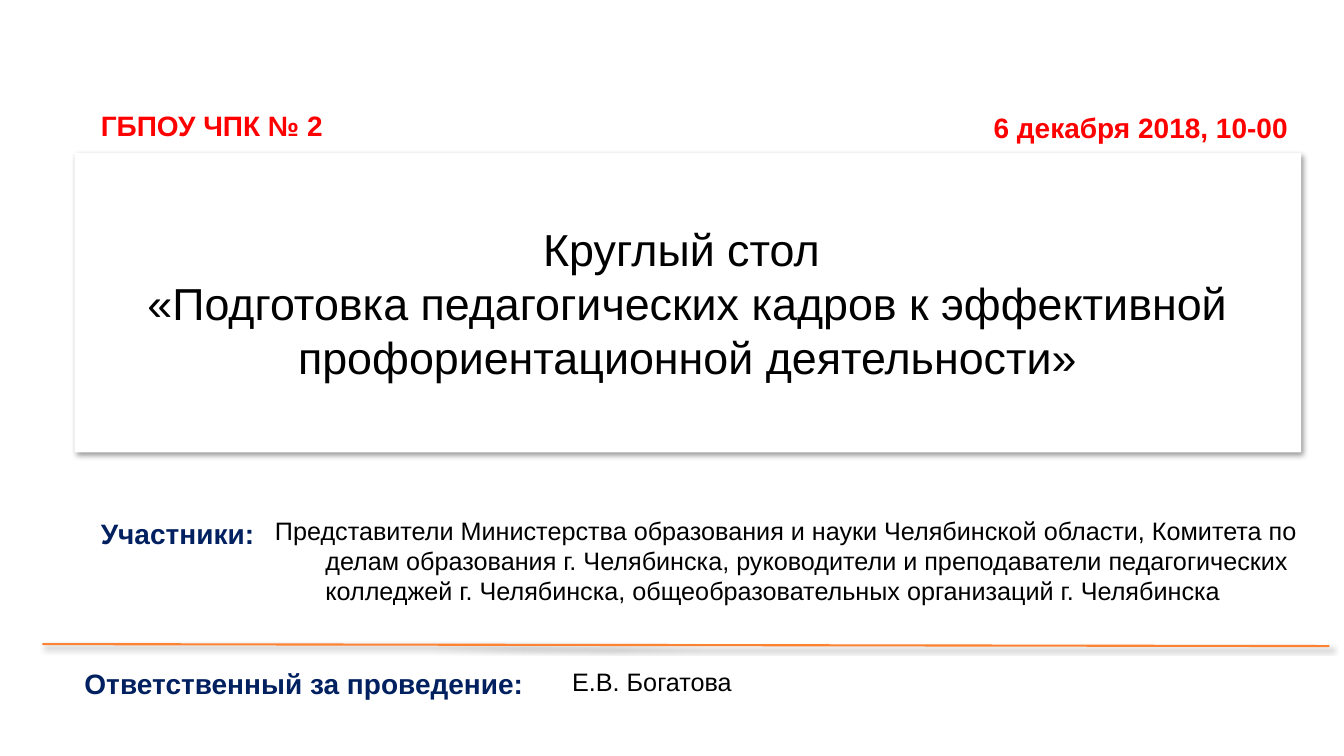
from lxml import etree
from pptx import Presentation
from pptx.dml.color import RGBColor
from pptx.enum.shapes import MSO_CONNECTOR, MSO_SHAPE
from pptx.enum.text import MSO_ANCHOR, MSO_AUTO_SIZE, PP_ALIGN
from pptx.oxml.ns import qn
from pptx.util import Cm, Pt

RECTANGLE = MSO_SHAPE.RECTANGLE
STRAIGHT = MSO_CONNECTOR.STRAIGHT
MIDDLE = MSO_ANCHOR.MIDDLE
GROW = MSO_AUTO_SIZE.SHAPE_TO_FIT_TEXT
LEFT, CENTER = PP_ALIGN.LEFT, PP_ALIGN.CENTER


def color(value):
    return RGBColor.from_string(value)


def write(tf, text, size=18, fill="000000", bold=False, align=LEFT, hanging=0):
    """Fill the first paragraph; hanging is the hanging indent in cm."""
    p = tf.paragraphs[0]
    p.text = text
    p.alignment = align
    if hanging:
        pPr = p._p.get_or_add_pPr()
        pPr.set("marL", str(Cm(hanging)))
        pPr.set("indent", str(-Cm(hanging)))
    for r in p.runs:
        r.font.name = "Arial"
        r.font.size = Pt(size)
        r.font.bold = bold
        r.font.color.rgb = color(fill)


def drop_shadow(sp):
    effects = etree.SubElement(sp._element.spPr, qn("a:effectLst"))
    shadow = etree.SubElement(effects, qn("a:outerShdw"), blurRad=str(Pt(4)),
                              dist=str(Pt(3)), dir="2700000", rotWithShape="0")
    tint = etree.SubElement(shadow, qn("a:srgbClr"), val="000000")
    etree.SubElement(tint, qn("a:alpha"), val="40000")


class Announcement:
    RED, NAVY, ORANGE, WHITE = "FF0000", "002060", "FD8231", "FFFFFF"

    def __init__(self, prs):
        self.s = prs.slides.add_slide(prs.slide_layouts[6])

    def title(self, text, x, y, w, h):
        sp = self.s.shapes.add_shape(RECTANGLE, Cm(x), Cm(y), Cm(w), Cm(h))
        sp.fill.solid()
        sp.fill.fore_color.rgb = color(self.WHITE)
        sp.line.fill.background()
        drop_shadow(sp)
        sp.text_frame.word_wrap = True
        sp.text_frame.vertical_anchor = MIDDLE
        write(sp.text_frame, text, size=32, align=CENTER)

    def rule(self, x1, y1, x2, y2):
        line = self.s.shapes.add_connector(STRAIGHT, Cm(x1), Cm(y1), Cm(x2), Cm(y2))
        line.line.color.rgb = color(self.ORANGE)
        line.line.width = Pt(1.5)
        drop_shadow(line)

    def text(self, text, x, y, w, h, wrap=True, **style):
        tf = self.s.shapes.add_textbox(Cm(x), Cm(y), Cm(w), Cm(h)).text_frame
        tf.word_wrap = wrap
        tf.auto_size = GROW
        write(tf, text, **style)

    def label(self, text, x, y, w, fill):
        self.text(text, x, y, w, 1.12, wrap=False, size=20, fill=fill, bold=True)


def main():
    prs = Presentation()
    prs.slide_width, prs.slide_height = Cm(33.87), Cm(19.05)
    a = Announcement(prs)
    a.title("Круглый стол \v«Подготовка педагогических кадров к эффективной "
            "профориентационной деятельности»", 1.88, 3.86, 30.91, 7.54)
    a.rule(1.07, 16.23, 33.5, 16.28)
    a.label("ГБПОУ ЧПК № 2", 2.29, 2.62, 6.15, a.RED)
    a.label("6 декабря 2018, 10-00", 24.79, 2.67, 7.98, a.RED)
    a.label("Участники:", 2.29, 12.88, 4.42, a.NAVY)
    a.text("Представители Министерства образования и науки Челябинской области, "
           "Комитета по делам образования г. Челябинска, руководители и "
           "преподаватели педагогических колледжей г. Челябинска, "
           "общеобразовательных организаций г. Челябинска",
           6.68, 12.85, 27.18, 2.57, hanging=1.27)
    a.label("Ответственный за проведение:", 1.88, 16.66, 11.66, a.NAVY)
    a.text("Е.В. Богатова", 14.17, 16.66, 16.94, 1.02)
    prs.save("out.pptx")


if __name__ == "__main__":
    main()
